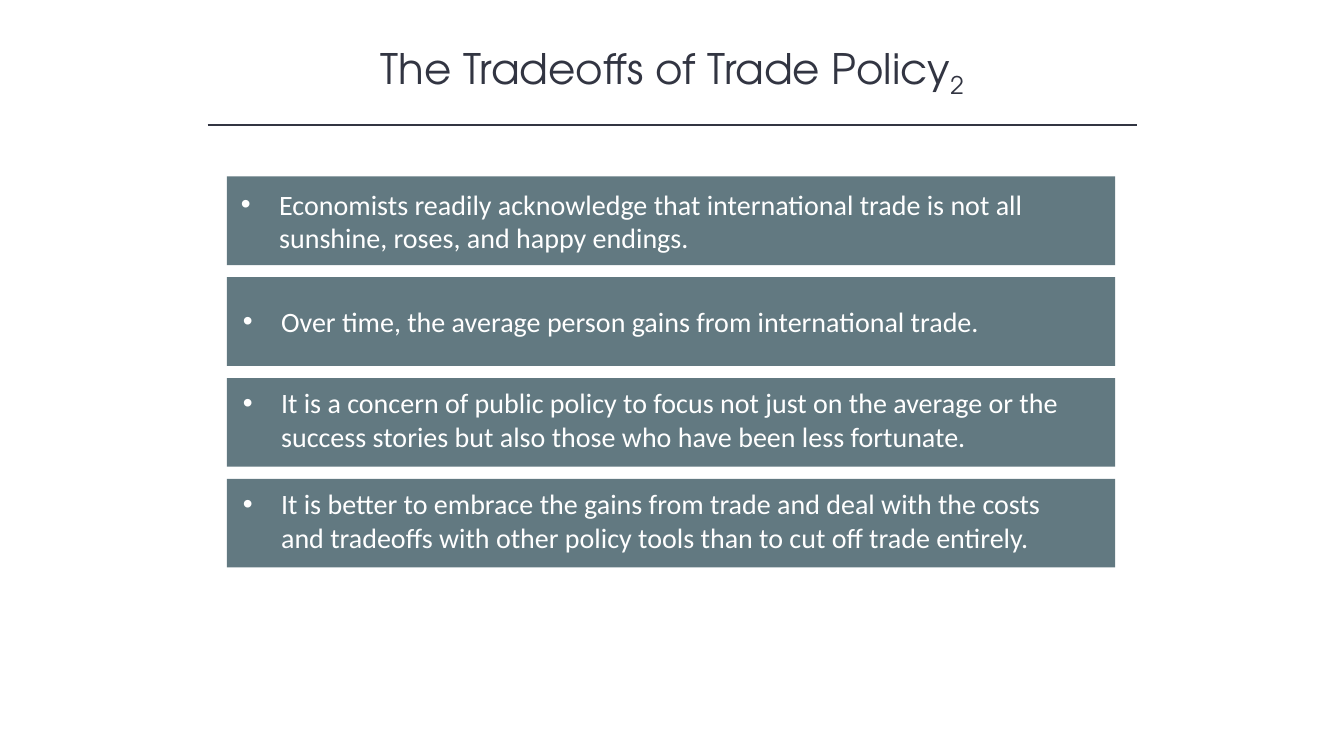
import dataclasses

import lxml.etree
import pptx
import pptx.dml.color
import pptx.enum.shapes
import pptx.enum.text
import pptx.oxml.ns
import pptx.util

Inches = pptx.util.Inches
Pt = pptx.util.Pt
qn = pptx.oxml.ns.qn

INK = pptx.dml.color.RGBColor(0x32, 0x35, 0x42)
SLATE = pptx.dml.color.RGBColor(0x62, 0x79, 0x81)
WHITE = pptx.dml.color.RGBColor(0xFF, 0xFF, 0xFF)
TITLE_FONT = "TeX Gyre Adventor"
BODY_FONT = "Calibri"

BAR_LEFT, BAR_TOP, BAR_WIDTH, BAR_HEIGHT = 2.25, 1.75, 8.81, 0.88
BAR_PITCH = 1.0
TEXT_WIDTH = 8.54
INDENT = 0.38


@dataclasses.dataclass
class Statement:
    text: str
    left: float
    top: float
    height: float


STATEMENTS = [
    Statement("Economists readily acknowledge that international trade is not all "
              "sunshine, roses, and happy endings.", 2.29, 1.81, 0.77),
    Statement("Over time, the average person gains from international trade.",
              2.31, 2.97, 0.44),
    Statement("It is a concern of public policy to focus not just on the average or the "
              "success stories but also those who have been less fortunate.",
              2.31, 3.78, 0.77),
    Statement("It is better to embrace the gains from trade and deal with the costs "
              "and tradeoffs with other policy tools than to cut off trade entirely.",
              2.31, 4.78, 0.77),
]


def add_run(paragraph, text: str, font_name: str, size: float, color):
    run = paragraph.add_run()
    run.text = text
    run.font.name = font_name
    run.font.size = Pt(size)
    run.font.color.rgb = color
    return run


def add_rectangle(shapes, left: float, top: float, width: float, height: float):
    rectangle = shapes.add_shape(
        pptx.enum.shapes.MSO_SHAPE.RECTANGLE,
        Inches(left), Inches(top), Inches(width), Inches(height))
    rectangle.shadow.inherit = False
    rectangle.fill.solid()
    rectangle.fill.fore_color.rgb = SLATE
    rectangle.line.fill.background()
    return rectangle


def add_bullet(paragraph) -> None:
    properties = paragraph._p.get_or_add_pPr()
    properties.set("marL", str(Inches(INDENT)))
    properties.set("indent", str(-Inches(INDENT)))
    lxml.etree.SubElement(properties, qn("a:buFont"), typeface="Arial")
    lxml.etree.SubElement(properties, qn("a:buChar"), char="•")


def add_title(slide) -> None:
    title = slide.shapes.add_textbox(Inches(1.67), Inches(0.37), Inches(10), Inches(0.61))
    frame = title.text_frame
    frame.word_wrap = True
    frame.auto_size = pptx.enum.text.MSO_AUTO_SIZE.SHAPE_TO_FIT_TEXT
    paragraph = frame.paragraphs[0]
    paragraph.alignment = pptx.enum.text.PP_ALIGN.CENTER
    add_run(paragraph, "The Tradeoffs of Trade Policy", TITLE_FONT, 30, INK)
    number = add_run(paragraph, "2", TITLE_FONT, 30, INK)
    number._r.get_or_add_rPr().set("baseline", "-25000")


def add_title_rule(slide) -> None:
    rule = slide.shapes.add_connector(
        pptx.enum.shapes.MSO_CONNECTOR.STRAIGHT,
        Inches(2.06), Inches(1.24), Inches(11.28), Inches(1.24))
    rule.line.color.rgb = INK
    rule.line.width = Pt(1)
    lxml.etree.SubElement(rule._element.spPr, qn("a:effectLst"))


def add_statement(slide, index: int, statement: Statement) -> None:
    group = slide.shapes.add_group_shape()
    add_rectangle(group.shapes, BAR_LEFT, BAR_TOP + index * BAR_PITCH, BAR_WIDTH, BAR_HEIGHT)
    label = add_rectangle(group.shapes, statement.left, statement.top,
                          TEXT_WIDTH, statement.height)
    frame = label.text_frame
    frame.word_wrap = True
    frame.auto_size = pptx.enum.text.MSO_AUTO_SIZE.SHAPE_TO_FIT_TEXT
    frame.vertical_anchor = pptx.enum.text.MSO_ANCHOR.TOP
    paragraph = frame.paragraphs[0]
    paragraph.alignment = pptx.enum.text.PP_ALIGN.LEFT
    add_bullet(paragraph)
    add_run(paragraph, statement.text, BODY_FONT, 20, WHITE)


def main() -> None:
    presentation = pptx.Presentation()
    presentation.slide_width = Inches(13.33)
    presentation.slide_height = Inches(7.5)
    slide = presentation.slides.add_slide(presentation.slide_layouts[6])

    # Heading
    add_title(slide)
    add_title_rule(slide)

    # Statement bars
    for index, statement in enumerate(STATEMENTS):
        add_statement(slide, index, statement)

    presentation.save("out.pptx")


if __name__ == "__main__":
    main()
